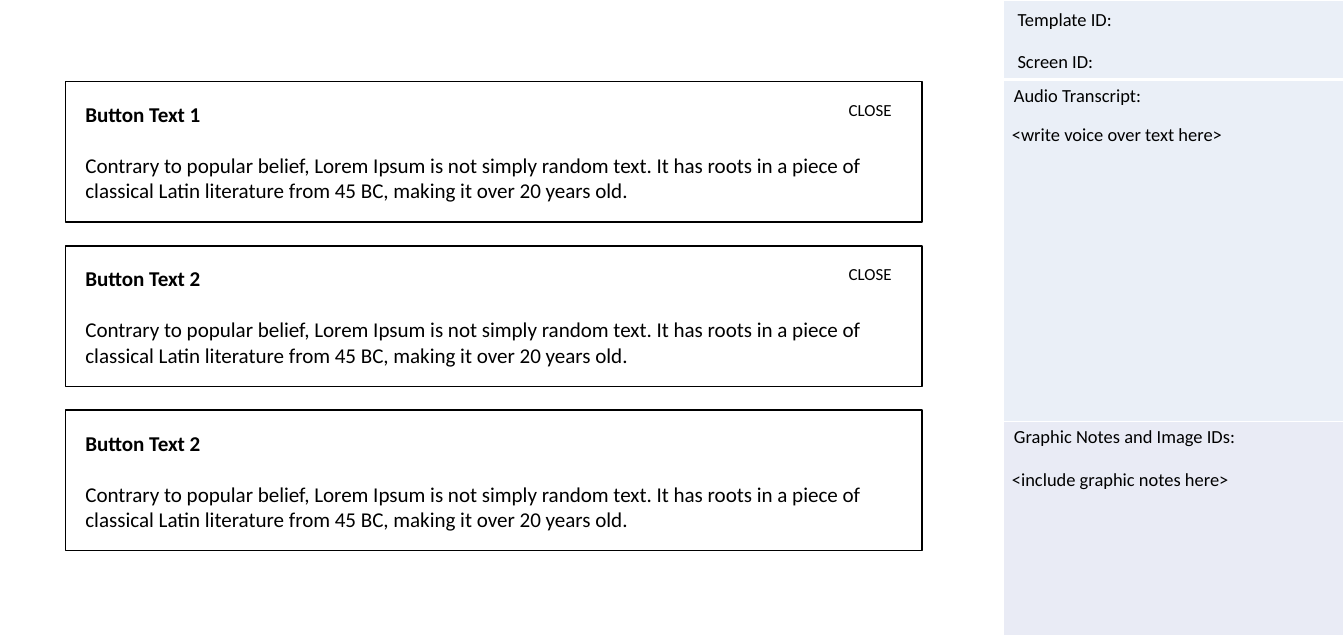
from dataclasses import dataclass

from lxml import etree
from pptx import Presentation
from pptx.dml.color import RGBColor
from pptx.enum.shapes import MSO_SHAPE
from pptx.enum.text import MSO_ANCHOR, PP_ALIGN
from pptx.oxml.ns import qn
from pptx.util import Inches, Pt

RECTANGLE = MSO_SHAPE.RECTANGLE
TOP = MSO_ANCHOR.TOP
LEFT = PP_ALIGN.LEFT


@dataclass(frozen=True)
class Theme:
    font: str = "Calibri"
    ink: str = "000000"
    paper: str = "FFFFFF"
    note_fill: str = "EAEFF7"
    graphic_fill: str = "E9EBF5"
    panel_size: float = 16
    note_size: float = 14
    close_size: float = 12.8


THEME = Theme()

BODY = ("Contrary to popular belief, Lorem Ipsum is not simply random text. "
        "It has roots in a piece of classical Latin literature from 45 BC, "
        "making it over 20 years old.")
# heading, close label
PANELS = [("Button Text 1", "CLOSE"), ("Button Text 2", "CLOSE"), ("Button Text 2", "")]
# text, height, fill, width of the rule below in points
SIDEBAR_ROWS = [
    ("", 0.84, THEME.note_fill, 3),
    ("Audio Transcript:", 3.6, THEME.note_fill, 1),
    ("Graphic Notes and Image IDs:", 2.26, THEME.graphic_fill, 1),
]
# text, left, top
SIDEBAR_LABELS = [
    ("Screen ID:", 10.63, 0.48),
    ("Template ID:", 10.63, 0.04),
    ("<write voice over text here>", 10.57, 1.25),
    ("<include graphic notes here>", 10.57, 4.88),
]

SLIDE_W, SLIDE_H = 14.17, 6.69
SIDEBAR_X = 10.58
SIDEBAR_W = SLIDE_W - SIDEBAR_X
PANEL_X, PANEL_Y, PANEL_W, PANEL_H = 0.69, 0.86, 9.03, 1.48
PANEL_PITCH = 1.73
PANEL_INSET = 0.21
CLOSE_W, CLOSE_H, CLOSE_DROP = 0.87, 0.32, 0.14
LABEL_H = 0.34


def color(code):
    return RGBColor.from_string(code)


def write(paragraph, text, size, bold=False):
    paragraph.text = text
    paragraph.alignment = LEFT
    font = paragraph.font
    font.name, font.size, font.bold = THEME.font, Pt(size), bold
    font.color.rgb = color(THEME.ink)


def add_label(slide, text, left, top, width, height, size):
    box = slide.shapes.add_textbox(*map(Inches, (left, top, width, height)))
    box.text_frame.word_wrap = True
    write(box.text_frame.paragraphs[0], text, size)


def rule_cell(cell, bottom_width):
    """Draw the four cell borders; they must precede the fill in the XML."""
    widths = {"a:lnL": 1, "a:lnR": 1, "a:lnT": 1, "a:lnB": bottom_width}
    properties = cell._tc.get_or_add_tcPr()
    for position, (tag, width) in enumerate(widths.items()):
        line = etree.Element(qn(tag), w=str(Pt(width)))
        fill = etree.SubElement(line, qn("a:solidFill"))
        etree.SubElement(fill, qn("a:srgbClr"), val=THEME.paper)
        properties.insert(position, line)


def add_sidebar(slide):
    height = sum(row[1] for row in SIDEBAR_ROWS)
    table = slide.shapes.add_table(
        len(SIDEBAR_ROWS), 1, *map(Inches, (SIDEBAR_X, 0, SIDEBAR_W, height))).table
    table.first_row = table.horz_banding = False
    for index, (text, row_height, fill, bottom_width) in enumerate(SIDEBAR_ROWS):
        table.rows[index].height = Inches(row_height)
        cell = table.cell(index, 0)
        cell.margin_left = cell.margin_right = Inches(0.11)
        cell.fill.solid()
        cell.fill.fore_color.rgb = color(fill)
        rule_cell(cell, bottom_width)
        write(cell.text_frame.paragraphs[0], text, THEME.note_size)
    for text, left, top in SIDEBAR_LABELS:
        add_label(slide, text, left, top, SLIDE_W - left, LABEL_H, THEME.note_size)


def add_panel(slide, top, heading, close):
    panel = slide.shapes.add_shape(
        RECTANGLE, *map(Inches, (PANEL_X, top, PANEL_W, PANEL_H)))
    panel.shadow.inherit = False
    panel.fill.solid()
    panel.fill.fore_color.rgb = color(THEME.paper)
    panel.line.color.rgb = color(THEME.ink)
    panel.line.width = Pt(1)
    frame = panel.text_frame
    frame.word_wrap = True
    frame.vertical_anchor = TOP
    frame.margin_left = frame.margin_right = Inches(PANEL_INSET)
    frame.margin_top = frame.margin_bottom = Inches(PANEL_INSET)
    write(frame.paragraphs[0], heading, THEME.panel_size, bold=True)
    body = frame.add_paragraph()
    write(body, BODY, THEME.panel_size)
    body.space_before = Pt(19.5)
    if close:
        add_label(slide, close, PANEL_X + PANEL_W - CLOSE_W, top + CLOSE_DROP,
                  CLOSE_W, CLOSE_H, THEME.close_size)


def main():
    deck = Presentation()
    deck.slide_width, deck.slide_height = Inches(SLIDE_W), Inches(SLIDE_H)
    slide = deck.slides.add_slide(deck.slide_layouts.get_by_name("Blank"))
    add_sidebar(slide)
    for index, (heading, close) in enumerate(PANELS):
        add_panel(slide, PANEL_Y + index * PANEL_PITCH, heading, close)
    deck.save("out.pptx")


if __name__ == "__main__":
    main()
